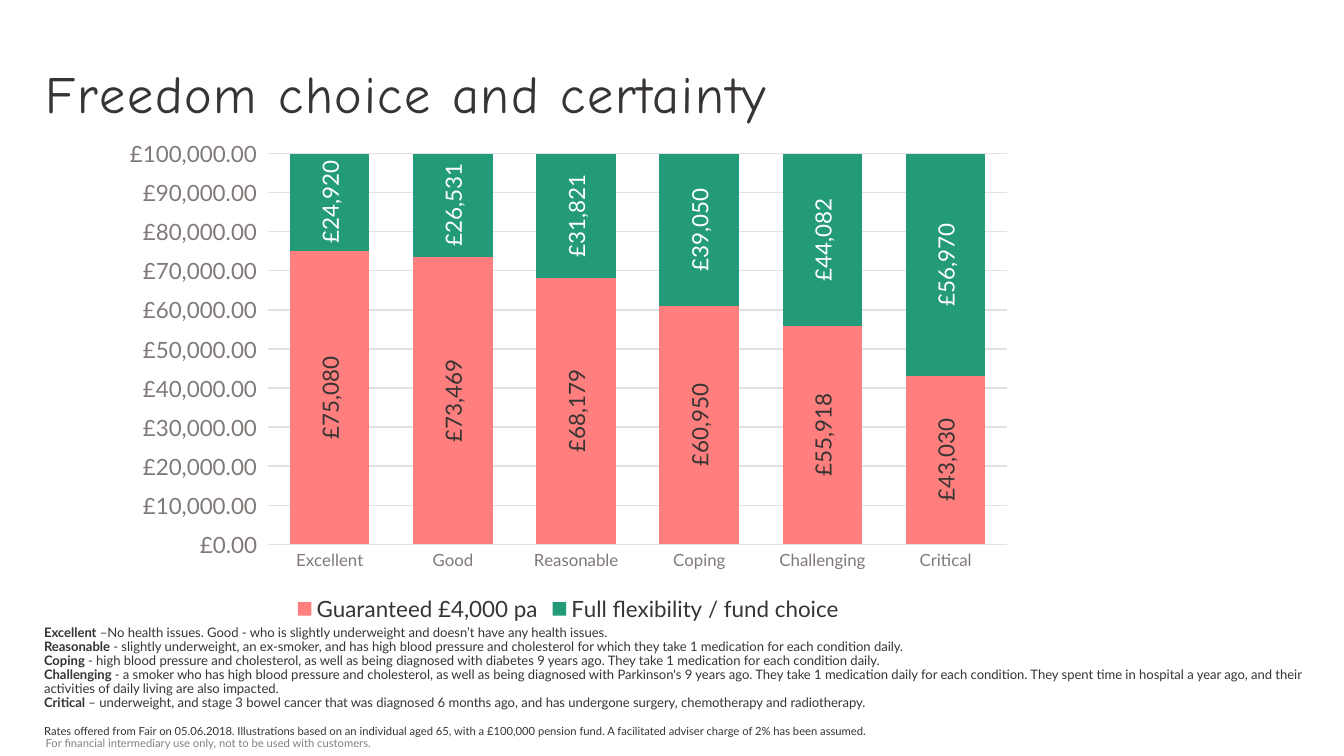
from pptx import Presentation
from pptx.chart.data import CategoryChartData
from pptx.dml.color import RGBColor
from pptx.enum.chart import XL_CHART_TYPE, XL_LABEL_POSITION, XL_LEGEND_POSITION, XL_TICK_MARK
from pptx.enum.text import MSO_ANCHOR
from pptx.util import Inches, Pt

COLORS = {
    "ink": "373433",
    "axis": "807977",
    "grid": "E2E0E0",
    "guaranteed": "FF7E7E",
    "flexible": "239B78",
    "white": "FFFFFF",
    "footer": "808080",
}


def style_font(font, size, color, name="Lato"):
    font.size = Pt(size)
    font.name = name
    font.color.rgb = RGBColor.from_string(COLORS[color])


def add_text(place, lines, size, color, spacing=0.9, name="Lato", insets=(0.1, 0.05, 0.1, 0.05), anchor=MSO_ANCHOR.TOP):
    box = page.shapes.add_textbox(*[Inches(length) for length in place])
    frame = box.text_frame
    frame.word_wrap = True
    frame.vertical_anchor = anchor
    frame.margin_left, frame.margin_top, frame.margin_right, frame.margin_bottom = [Inches(inset) for inset in insets]
    for index, (lead, body) in enumerate(lines):
        para = frame.add_paragraph() if index else frame.paragraphs[0]
        para.line_spacing = spacing
        for text, bold in ((lead, True), (body, False)):
            if text:
                span = para.add_run()
                span.text = text
                span.font.bold = bold
                style_font(span.font, size, color, name)
    return box


deck = Presentation()
deck.slide_width = Inches(10)
deck.slide_height = Inches(10) * 9 // 16
page = deck.slides.add_slide(deck.slide_layouts[6])

title = add_text((0.3, 0.02, 8.94, 0.91), [("", "Freedom choice and certainty")], 28, "ink", 0.7,
                 "Comic Neue", (0.04, 0.02, 0.04, 0.02), MSO_ANCHOR.BOTTOM)
title.text_frame.paragraphs[0].runs[0].font._element.set("spc", "100")

guaranteed = [75080, 73469, 68179, 60950, 55918, 43030]
data = CategoryChartData()
data.categories = ["Excellent", "Good", "Reasonable", "Coping", "Challenging", "Critical"]
data.add_series("Guaranteed £4,000 pa", guaranteed)
data.add_series("Full flexibility / fund choice", [100000 - value for value in guaranteed])
chart = page.shapes.add_chart(XL_CHART_TYPE.COLUMN_STACKED, Inches(0.83), Inches(0.97),
                              Inches(6.8), Inches(3.7), data).chart
style_font(chart.font, 10, "ink")
chart.has_title = False
chart.has_legend = True
chart.legend.position = XL_LEGEND_POSITION.BOTTOM
chart.legend.include_in_layout = False
style_font(chart.legend.font, 12, "ink")

plot = chart.plots[0]
plot.gap_width = 55
plot.overlap = 100
plot.vary_by_categories = False
for series, fill, label in zip(plot.series, ("guaranteed", "flexible"), ("ink", "white")):
    series.format.fill.solid()
    series.format.fill.fore_color.rgb = RGBColor.from_string(COLORS[fill])
    labels = series.data_labels
    labels.show_value = True
    labels.position = XL_LABEL_POSITION.CENTER
    labels.number_format = '"£"#,##0'
    labels.number_format_is_linked = False
    style_font(labels.font, 12, label)
for body in chart.element.xpath("//c:ser/c:dLbls/c:txPr/a:bodyPr"):
    body.set("rot", "-5400000")
    body.set("vert", "horz")

for axis, size in ((chart.category_axis, 9), (chart.value_axis, 12)):
    axis.major_tick_mark = XL_TICK_MARK.NONE
    axis.minor_tick_mark = XL_TICK_MARK.NONE
    style_font(axis.tick_labels.font, size, "axis")
values = chart.value_axis
values.maximum_scale = 100000
values.has_major_gridlines = True
values.tick_labels.number_format = r'"£"#,##0.00_);[Red]\("£"#,##0.00\)'
values.tick_labels.number_format_is_linked = False
values.format.line.fill.background()
for line in (chart.category_axis.format.line, values.major_gridlines.format.line):
    line.width = Pt(0.75)
    line.color.rgb = RGBColor.from_string(COLORS["grid"])

add_text((0.23, 4.61, 9.56, 0.93), [
    ("Excellent", " –No health issues. Good - who is slightly underweight and doesn’t have any health issues."),
    ("Reasonable ", "- slightly underweight, an ex-smoker, and has high blood pressure and cholesterol for which they take 1 medication for each condition daily."),
    ("Coping ", "- high blood pressure and cholesterol, as well as being diagnosed with diabetes 9 years ago. They take 1 medication for each condition daily."),
    ("Challenging ", "- a smoker who has high blood pressure and cholesterol, as well as being diagnosed with Parkinson's 9 years ago. They take 1 medication daily for each condition. They spent time in hospital a year ago, and their activities of daily living are also impacted."),
    ("Critical ", "– underweight, and stage 3 bowel cancer that was diagnosed 6 months ago, and has undergone surgery, chemotherapy and radiotherapy."),
], 7, "ink")
add_text((0.31, 5.43, 5.14, 0.2),
         [("", "For financial intermediary use only, not to be used with customers.")],
         6, "footer", 1.0, insets=(0.03, 0.04, 0.07, 0.04), anchor=MSO_ANCHOR.MIDDLE)
add_text((0.23, 5.35, 9.09, 0.19),
         [("", "Rates offered from Fair on 05.06.2018. Illustrations based on an individual aged 65, with a £100,000 pension fund. A facilitated adviser charge of 2% has been assumed.")],
         6, "ink")

deck.save("out.pptx")
